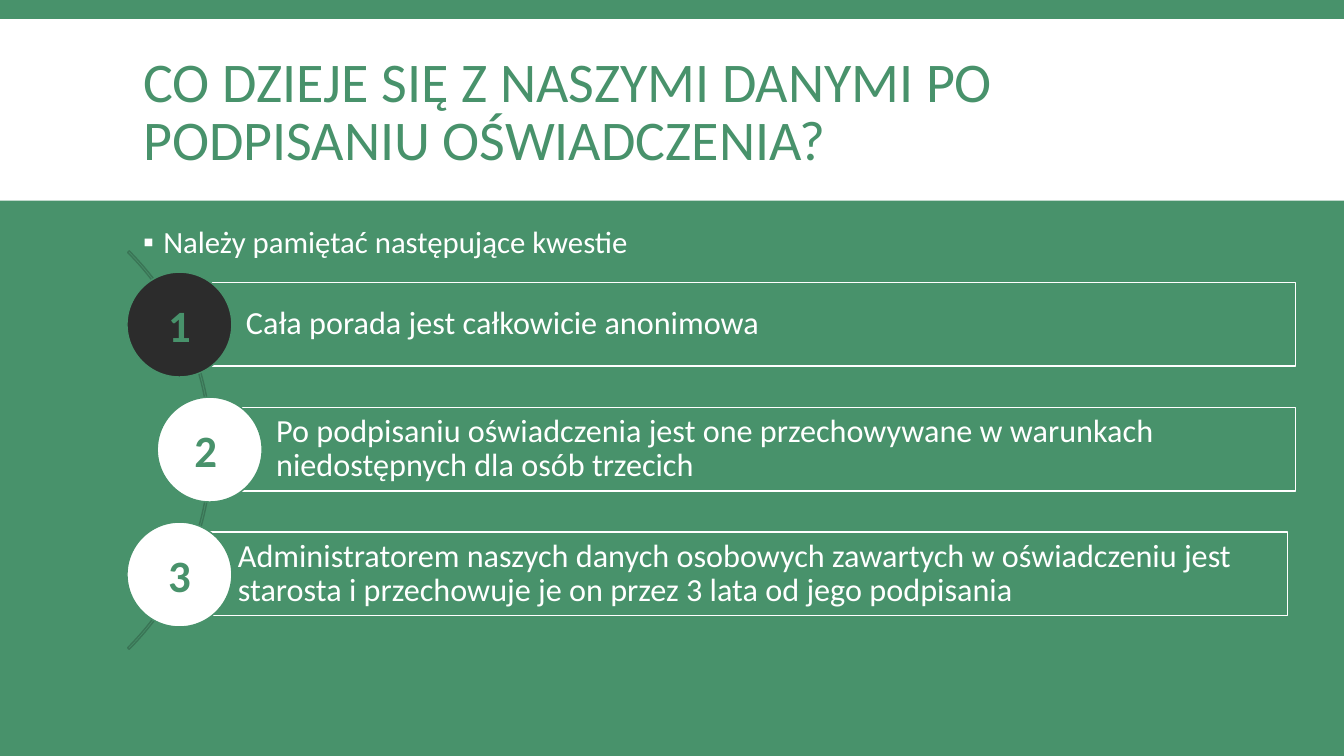
import pptx
import pptx.util
import pptx.dml.color
import pptx.enum.shapes
import pptx.enum.text
import lxml.etree
from pptx.util import Inches

GREEN, DARK, WHITE, ARC_GREEN = "48926B", "2C2C2C", "FFFFFF", "3A7556"
SHAPE = pptx.enum.shapes.MSO_SHAPE
ALIGN = pptx.enum.text.PP_ALIGN
ANCHOR = pptx.enum.text.MSO_ANCHOR
FIT = pptx.enum.text.MSO_AUTO_SIZE


def rgb(color):
    return pptx.dml.color.RGBColor.from_string(color)


def write(shape, text, size, color, spacing=1.0, bold=False):
    frame = shape.text_frame
    frame.text = text
    frame.word_wrap = True
    frame.auto_size = FIT.NONE
    paragraph = frame.paragraphs[0]
    paragraph.alignment = ALIGN.LEFT
    paragraph.line_spacing = spacing
    font = paragraph.runs[0].font
    font.name, font.size, font.bold = "Calibri", pptx.util.Pt(size), bold
    font.color.rgb = rgb(color)
    return paragraph


deck = pptx.Presentation()
deck.slide_width, deck.slide_height = Inches(13.33), Inches(7.5)
slide = deck.slides.add_slide(deck.slide_layouts[1])
shapes = slide.shapes
slide.background.fill.solid()
slide.background.fill.fore_color.rgb = rgb(GREEN)

# White band behind the title
band = shapes.add_shape(SHAPE.RECTANGLE, 0, Inches(0.19), Inches(13.33), Inches(1.8))
band.shadow.inherit = False
band.fill.solid()
band.fill.fore_color.rgb = rgb(WHITE)
band.line.fill.background()
shapes.title._element.addprevious(band._element)

# Title
title = shapes.title
title.left, title.top, title.width, title.height = map(Inches, (1.32, 0.31, 10.7, 1.65))
write(title, "CO DZIEJE SIĘ Z NASZYMI DANYMI PO PODPISANIU OŚWIADCZENIA?", 40, GREEN, 0.85)
title.text_frame.vertical_anchor = ANCHOR.MIDDLE

# Introductory bullet
intro = slide.placeholders[1]
intro.left, intro.top, intro.width, intro.height = map(Inches, (1.32, 2.2, 10.7, 4.6))
bullet = write(intro, "Należy pamiętać następujące kwestie", 22, WHITE, 0.9)
bullet.space_before, bullet.space_after = pptx.util.Pt(12), pptx.util.Pt(2)
properties = bullet._p.get_or_add_pPr()
properties.set("marL", str(Inches(0.2)))
properties.set("indent", str(-Inches(0.2)))
bullet_color = lxml.etree.SubElement(properties, pptx.oxml.ns.qn("a:buClr"))
lxml.etree.SubElement(bullet_color, pptx.oxml.ns.qn("a:srgbClr"), val=WHITE)
lxml.etree.SubElement(properties, pptx.oxml.ns.qn("a:buFont"), typeface="Arial")
lxml.etree.SubElement(properties, pptx.oxml.ns.qn("a:buChar"), char="▪")

# Thin arc linking the numbers
arc = shapes.add_shape(SHAPE.BLOCK_ARC, Inches(-3.49), Inches(1.67), Inches(5.59), Inches(5.59))
arc.adjustments[0], arc.adjustments[1], arc.adjustments[2] = 189, 27, 0.004
arc.shadow.inherit = False
arc.fill.background()
arc.line.color.rgb = rgb(ARC_GREEN)
arc.line.width = pptx.util.Pt(1)

# Numbered facts: text, box left and width, circle left and colour, number left
facts = [
    ("Cała porada jest całkowicie anonimowa", 1.78, 11.07, 1.26, DARK, 1.57),
    ("Po podpisaniu oświadczenia jest one przechowywane w warunkach "
     "niedostępnych dla osób trzecich", 2.08, 10.77, 1.56, WHITE, 1.83),
    ("Administratorem naszych danych osobowych zawartych w oświadczeniu jest "
     "starosta i przechowuje je on przez 3 lata od jego podpisania",
     1.7, 11.07, 1.26, WHITE, 1.57),
]
for row, (fact, box_left, box_width, circle_left, circle_color, number_left) in enumerate(facts):
    top = 2.8 + 1.24 * row
    box = shapes.add_shape(SHAPE.RECTANGLE, Inches(box_left), Inches(top),
                           Inches(box_width), Inches(0.83))
    circle = shapes.add_shape(SHAPE.OVAL, Inches(circle_left), Inches(top - 0.1),
                              Inches(1.04), Inches(1.04))
    for part, fill, outline in ((box, GREEN, WHITE), (circle, circle_color, GREEN)):
        part.shadow.inherit = False
        part.fill.solid()
        part.fill.fore_color.rgb = rgb(fill)
        part.line.color.rgb = rgb(outline)
        part.line.width = pptx.util.Pt(1)

    write(box, fact, 23, WHITE, 0.9)
    frame = box.text_frame
    frame.vertical_anchor = ANCHOR.MIDDLE
    frame.margin_left = Inches(0.66)
    frame.margin_top = frame.margin_right = frame.margin_bottom = Inches(0.06)

    number = shapes.add_textbox(Inches(number_left), Inches(top + 0.1), Inches(0.47), Inches(0.64))
    write(number, str(row + 1), 32, GREEN, bold=True)

deck.save("out.pptx")
